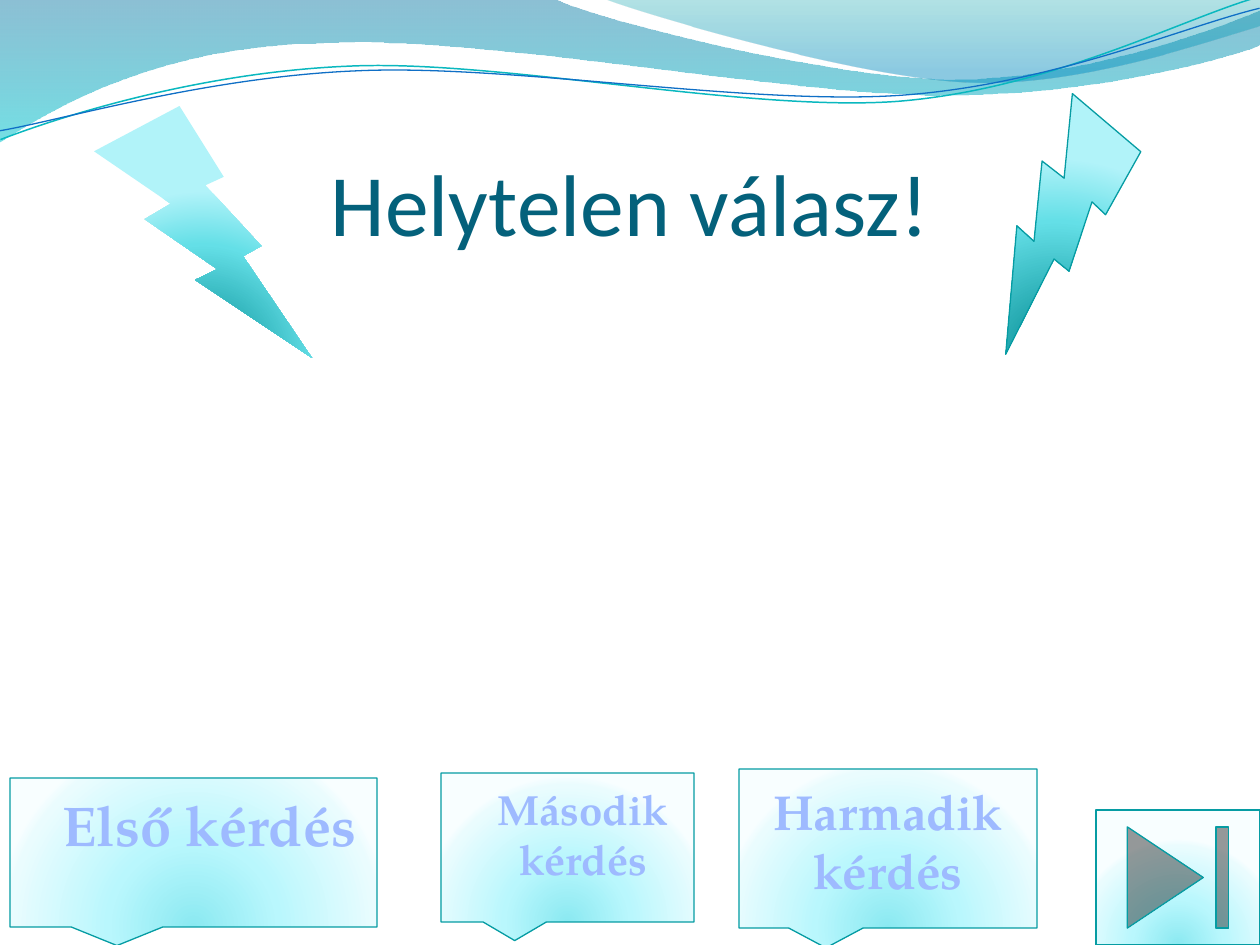
from lxml import etree
from pptx import Presentation
from pptx.dml.color import RGBColor
from pptx.enum.shapes import MSO_SHAPE
from pptx.enum.text import MSO_ANCHOR, MSO_AUTO_SIZE, PP_ALIGN
from pptx.oxml import parse_xml
from pptx.oxml.ns import nsdecls, qn
from pptx.util import Emu, Pt

BOLT = MSO_SHAPE.LIGHTNING_BOLT
CALLOUT = MSO_SHAPE.RECTANGULAR_CALLOUT
END_BUTTON = MSO_SHAPE.ACTION_BUTTON_END
BOTTOM, TOP = MSO_ANCHOR.BOTTOM, MSO_ANCHOR.TOP

PX = 914400 / 126
SLIDE_SIZE = (1260, 945)
LINE_WAVE_ROTATION = 357.3

LINEAR = '<a:lin ang="5400000" scaled="0"/>'
RADIAL = ('<a:path path="circle"><a:fillToRect l="50000" t="130000" '
          'r="50000" b="-30000"/></a:path>')

# Gradient stops are (position %, colour, opacity %).
THEME = {
    "heading_font": "Calibri", "heading_size": 50, "heading": "04617B",
    "label_font": "TeX Gyre Pagella", "label": "9EBAFF",
    "outline": "069CA3", "outline_width": 0.75,
    "wave_back": ([(0, "0074A1", 45), (100, "00C6CF", 55)], LINEAR),
    "wave_front": ([(0, "00A1A9", 30), (80, "008BBF", 45)], LINEAR),
    "strong": ([(0, "008A91", 100), (68, "64DFE7", 100),
                (100, "B1F3F9", 100)], RADIAL),
    "pale": ([(0, "8BE9F1", 100), (43, "B9F7FD", 100),
              (93, "EAFCFE", 100), (100, "F8FEFF", 100)], RADIAL),
}

TITLE = ("Helytelen válasz!", (63, 97, 1134, 157))

# Each wave starts at a point; 2 numbers add a line, 6 add a Bézier curve.
FILLED_WAVES = [
    ("wave_back", (0, 0), [
        (554, -1), (600, 21, 837, 79, 955, 79), (1075, 79, 1207, 33, 1260, 11),
        (1261, 45), (1239, 55, 1096, 96, 940, 95), (784, 95, 481, 35, 324, 43),
        (163, 45, 58, 105, -1, 142)]),
    ("wave_front", (604, -1), [
        (641, 14, 859, 78, 969, 82), (1079, 87, 1211, 40, 1260, 26), (1260, 0)]),
]
LINE_WAVES = [
    ("0AB8BF", 0.85, (-2, 110), [
        (58, 90, 199, 52, 350, 53), (499, 53, 745, 118, 896, 114),
        (1049, 109, 1184, 45, 1260, 27)]),
    ("0F6FC6", 0.75, (-2, 101), [
        (57, 94, 207, 57, 357, 58), (509, 58, 750, 112, 902, 108),
        (1052, 104, 1188, 52, 1262, 38)]),
]

BOLTS = [
    {"frame": (94, 106, 218, 252), "outlined": False},
    {"frame": (952, 112, 208, 208), "rotation": 65},
]
# Callout frame, label frame, label paragraphs, type size, wrap
QUESTIONS = [
    ((10, 778, 367, 149), (45, 784, 329, 81), ["Első kérdés"], 32, False),
    ((441, 773, 253, 149), (474, 777, 218, 115), ["Második", "kérdés"], 24, True),
    ((739, 769, 298, 159), (739, 775, 298, 131), ["Harmadik kérdés"], 28, True),
]
BUTTON_FRAME = (1096, 810, 164, 135)


def px(*lengths):
    return [Emu(round(length * PX)) for length in lengths]


def paint_gradient(shape, stops, direction):
    shape.fill.background()
    stop_xml = "".join(
        f'<a:gs pos="{position * 1000}"><a:srgbClr val="{colour}">'
        f'<a:alpha val="{opacity * 1000}"/></a:srgbClr></a:gs>'
        for position, colour, opacity in stops)
    gradient = parse_xml(
        f'<a:gradFill {nsdecls("a")} rotWithShape="1">'
        f'<a:gsLst>{stop_xml}</a:gsLst>{direction}</a:gradFill>')
    properties = shape._element.spPr
    properties.replace(properties.find(qn("a:noFill")), gradient)


def set_line(shape, colour, width):
    shape.line.color.rgb = RGBColor.from_string(colour)
    shape.line.width = Pt(width)


def bend(shape, segments):
    """Merge the three lines of each 6-number segment into one Bézier curve."""
    lines = iter(list(shape._element.spPr.iter(qn("a:lnTo"))))
    for segment in segments:
        group = [next(lines) for _ in range(len(segment) // 2)]
        if len(group) == 1:
            continue
        curve = etree.Element(qn("a:cubicBezTo"))
        group[0].addprevious(curve)
        for line in group:
            curve.append(line[0])
            line.getparent().remove(line)


def add_wave(page, start, segments, closed):
    points = [px(*segment[i:i + 2])
              for segment in segments for i in range(0, len(segment), 2)]
    builder = page.shapes.build_freeform(*px(*start))
    builder.add_line_segments(points, close=closed)
    wave = builder.convert_to_shape()
    wave.shadow.inherit = False
    bend(wave, segments)
    return wave


def add_gradient_shape(page, kind, frame, gradient, rotation=0, outlined=True):
    shape = page.shapes.add_shape(kind, *px(*frame))
    shape.shadow.inherit = False
    shape.rotation = rotation
    paint_gradient(shape, *THEME[gradient])
    if outlined:
        set_line(shape, THEME["outline"], THEME["outline_width"])
    else:
        shape.line.fill.background()


def write(box, paragraphs, *, font, size, colour, bold=False, anchor=TOP,
          wrap=True, fit=MSO_AUTO_SIZE.NONE):
    frame = box.text_frame
    frame.text = "\n".join(paragraphs)
    frame.word_wrap = wrap
    frame.auto_size = fit
    frame.vertical_anchor = anchor
    for para in frame.paragraphs:
        para.alignment = PP_ALIGN.CENTER
        for span in para.runs:
            span.font.name = font
            span.font.size = Pt(size)
            span.font.bold = bold
            span.font.color.rgb = RGBColor.from_string(colour)


def place_title(page, text, frame):
    title = page.shapes.title
    title.left, title.top, title.width, title.height = px(*frame)
    write(title, [text], font=THEME["heading_font"], size=THEME["heading_size"],
          colour=THEME["heading"], anchor=BOTTOM)
    body = title.text_frame
    body.margin_left = body.margin_right = body.margin_bottom = 0
    page.shapes._spTree.append(title._element)  # in front of the waves


def main():
    deck = Presentation()
    deck.slide_width, deck.slide_height = px(*SLIDE_SIZE)
    page = deck.slides.add_slide(deck.slide_layouts[5])

    for gradient, start, segments in FILLED_WAVES:
        wave = add_wave(page, start, segments, closed=True)
        paint_gradient(wave, *THEME[gradient])
        wave.line.fill.background()
    for colour, width, start, segments in LINE_WAVES:
        wave = add_wave(page, start, segments, closed=False)
        wave.rotation = LINE_WAVE_ROTATION
        wave.fill.background()
        set_line(wave, colour, width)

    place_title(page, *TITLE)
    for bolt in BOLTS:
        add_gradient_shape(page, BOLT, gradient="strong", **bolt)
    for callout_frame, label_frame, paragraphs, size, wrap in QUESTIONS:
        add_gradient_shape(page, CALLOUT, callout_frame, "pale")
        label = page.shapes.add_textbox(*px(*label_frame))
        write(label, paragraphs, font=THEME["label_font"], size=size,
              colour=THEME["label"], bold=True, wrap=wrap,
              fit=MSO_AUTO_SIZE.SHAPE_TO_FIT_TEXT)
    add_gradient_shape(page, END_BUTTON, BUTTON_FRAME, "pale")

    deck.save("out.pptx")


if __name__ == "__main__":
    main()
